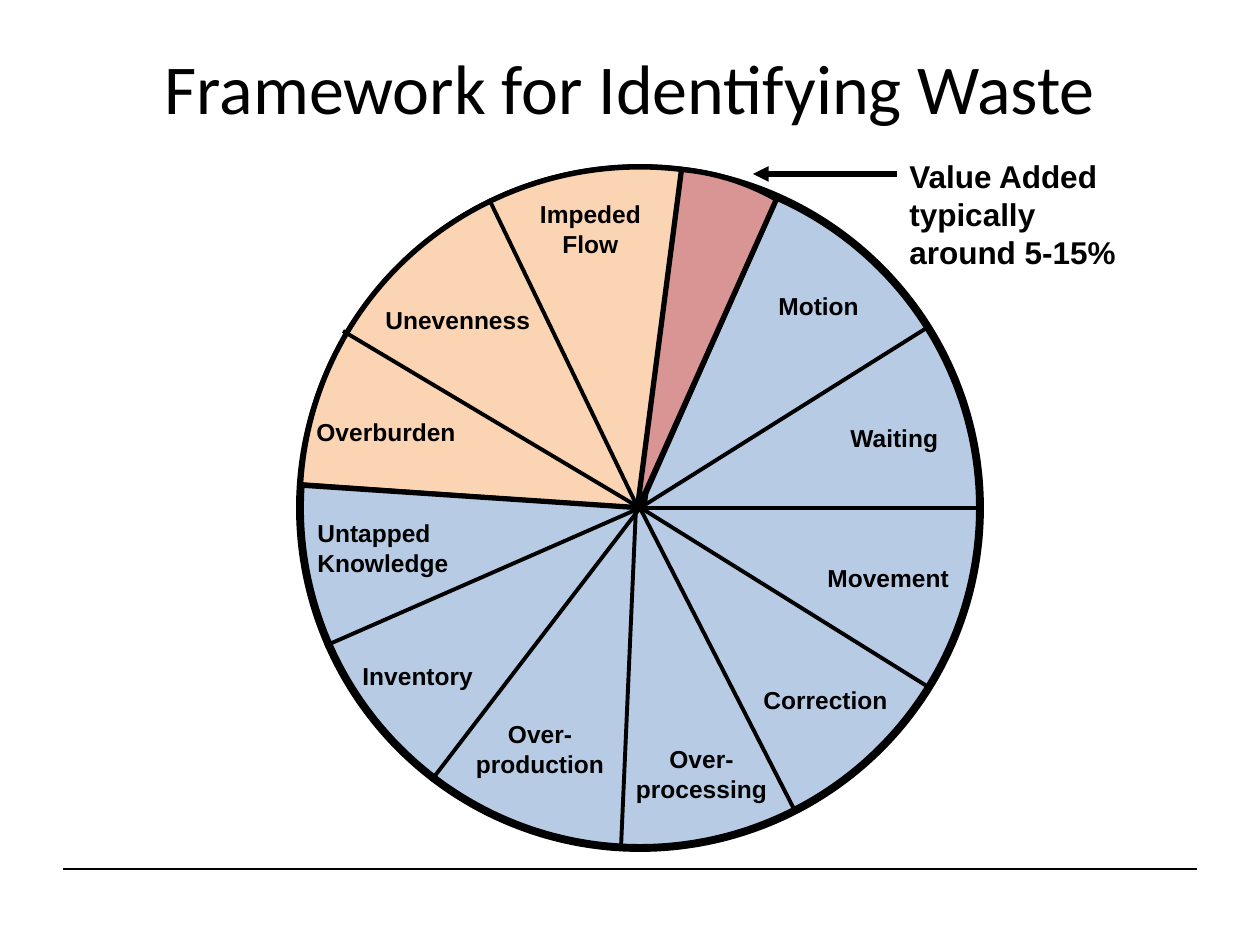
import copy

import pptx
import pptx.dml.color
import pptx.enum.shapes
import pptx.enum.text
import pptx.oxml.ns
import pptx.oxml.xmlchemy
import pptx.util

RGBColor = pptx.dml.color.RGBColor
BLACK = RGBColor(0x00, 0x00, 0x00)
BLUE = RGBColor(0xB7, 0xCC, 0xE4)
ORANGE = RGBColor(0xFB, 0xD4, 0xB4)
RED = RGBColor(0xD9, 0x95, 0x93)

SHAPE = pptx.enum.shapes.MSO_SHAPE
ALIGN = pptx.enum.text.PP_ALIGN
ANCHOR = pptx.enum.text.MSO_ANCHOR
qn = pptx.oxml.ns.qn
OxmlElement = pptx.oxml.xmlchemy.OxmlElement

PX_PER_INCH = 126
HUB = (640, 508)


def px(length):
    return pptx.util.Inches(length / PX_PER_INCH)


class WasteSlide:
    def __init__(self, presentation):
        self.slide = presentation.slides.add_slide(presentation.slide_layouts[6])
        self.label_font = "Arial"
        self.title_font = "Calibri"

    def text(self, words, box, size=14, align=ALIGN.LEFT, font=None, bold=True,
             anchor=ANCHOR.TOP):
        frame = self.slide.shapes.add_textbox(*map(px, box)).text_frame
        frame.word_wrap = True
        frame.vertical_anchor = anchor
        frame.text = words
        for paragraph in frame.paragraphs:
            paragraph.alignment = align
            for run in paragraph.runs:
                run.font.name = font or self.label_font
                run.font.size = pptx.util.Pt(size)
                run.font.bold = bold
                run.font.color.rgb = BLACK
            for line_break in paragraph._p.findall(qn("a:br")):
                line_break.append(copy.deepcopy(paragraph.runs[0]._r.rPr))

    def title(self, words, box):
        self.text(words, box, 40, ALIGN.CENTER, self.title_font, False, ANCHOR.MIDDLE)

    def disc(self, kind, box, fill, weight):
        disc = self.slide.shapes.add_shape(kind, *map(px, box))
        disc.shadow.inherit = False
        disc.fill.solid()
        disc.fill.fore_color.rgb = fill
        disc.line.color.rgb = BLACK
        disc.line.width = pptx.util.Pt(weight)
        return disc

    def sector(self, box, fill, rotation, start, end):
        sector = self.disc(SHAPE.PIE, box, fill, 3)
        sector.rotation = rotation
        for index, degrees in enumerate((start, end)):
            sector.adjustments[index] = degrees * 0.6

    def line(self, start, end, weight=2.25, arrow=False):
        line = self.slide.shapes.add_connector(
            pptx.enum.shapes.MSO_CONNECTOR.STRAIGHT, *map(px, start + end))
        line.line.color.rgb = BLACK
        line.line.width = pptx.util.Pt(weight)
        if arrow:
            tip = OxmlElement("a:tailEnd")
            tip.set("type", "triangle")
            line.line._get_or_add_ln().append(tip)
        line._element.spPr.append(OxmlElement("a:effectLst"))


SPOKES = [
    ((683, 168), HUB),
    ((777, 199), HUB),
    ((925, 329), HUB),
    ((325, 646), HUB),
    ((431, 781), HUB),
    ((343, 331), HUB),
    ((621, 848), (636, 508)),
    ((795, 811), HUB),
    ((930, 688), (633, 503)),
    ((980, 508), HUB),
    ((489, 199), (638, 508)),
    ((300, 484), HUB),
]

WASTES = [
    ("Motion", (766, 285, 123, 43), ALIGN.LEFT),
    ("Waiting", (838, 417, 123, 43), ALIGN.LEFT),
    ("Movement", (815, 557, 170, 43), ALIGN.LEFT),
    ("Correction", (751, 679, 152, 43), ALIGN.LEFT),
    ("Over-\nprocessing", (621, 738, 161, 72), ALIGN.CENTER),
    ("Over-\vproduction", (455, 713, 170, 72), ALIGN.CENTER),
    ("Inventory", (350, 655, 142, 43), ALIGN.LEFT),
    ("Untapped Knowledge", (305, 512, 200, 72), ALIGN.LEFT),
]

FLOW_WASTES = [
    ("Impeded\vFlow", (510, 193, 161, 72), ALIGN.CENTER),
    ("Unevenness", (373, 299, 185, 43), ALIGN.LEFT),
    ("Overburden", (304, 411, 184, 43), ALIGN.LEFT),
]


def main():
    presentation = pptx.Presentation()
    presentation.slide_width = px(1260)
    presentation.slide_height = px(945)
    waste = WasteSlide(presentation)

    waste.line((63, 869), (1197, 869), 0.75)
    waste.title("Framework for Identifying Waste", (63, 38, 1134, 98))

    waste.disc(SHAPE.OVAL, (300, 168, 680, 680), BLUE, 4.5)
    waste.sector((299, 168, 690, 680), ORANGE, 207.6, 336.22, 68.97)
    for rim, hub in SPOKES:
        waste.line(rim, hub)
    for name, box, align in WASTES:
        waste.text(name, box, align=align)

    waste.text("Value Added typically around 5-15%", (897, 151, 255, 127), 18)
    waste.line((897, 174), (753, 174), 3, arrow=True)
    waste.sector((292, 228, 690, 566), RED, 282.3, 355.13, 11.8)
    for name, box, align in FLOW_WASTES:
        waste.text(name, box, align=align)

    presentation.save("out.pptx")


if __name__ == "__main__":
    main()
